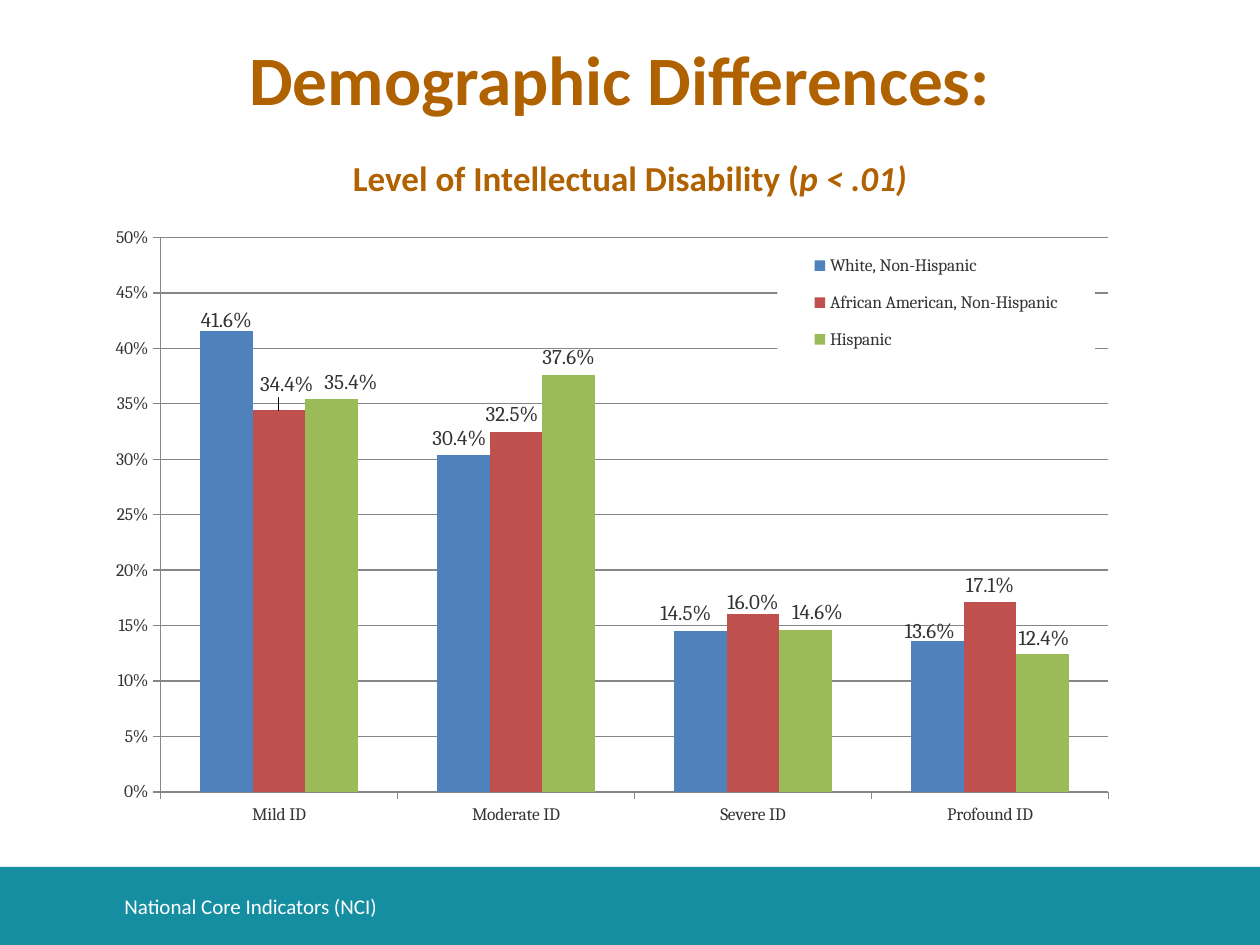
"""Build a slide with a clustered column chart of intellectual disability level by ethnicity."""
import pptx
import pptx.chart.data
import pptx.dml.color
import pptx.enum.chart
import pptx.enum.shapes
import pptx.enum.text
import pptx.oxml
import pptx.oxml.ns
import pptx.util

Pt = pptx.util.Pt
RGB = pptx.dml.color.RGBColor.from_string
Align = pptx.enum.text.PP_ALIGN
Chart = pptx.enum.chart

THEME = {
    "heading": RGB("B06100"), "band": RGB("168EA2"), "white": RGB("FFFFFF"),
    "ink": RGB("333333"), "rule": RGB("868686"),
    "title_size": Pt(39.6), "subtitle_size": Pt(20), "footer_size": Pt(12),
    "axis_size": Pt(10), "label_size": Pt(12),
    "text_font": "Calibri", "chart_font": "Cambria",
}


def apply(target, values):
    """Set every attribute named in values on target."""
    for name, value in values.items():
        setattr(target, name, value)


def style_font(font, size, color, **values):
    """Give a font its size, colour and further attributes."""
    apply(font, {"size": size, **values})
    font.color.rgb = color


deck = pptx.Presentation()
apply(deck, {"slide_width": Pt(720), "slide_height": Pt(540)})
slide = deck.slides.add_slide(deck.slide_layouts[6])

band = slide.shapes.add_shape(
    pptx.enum.shapes.MSO_SHAPE.RECTANGLE, Pt(0), Pt(495.4), Pt(720), Pt(44.6))
band.shadow.inherit = False
band.fill.solid()
band.fill.fore_color.rgb = THEME["band"]
band.line.fill.background()

texts = [
    ((36, 77, 648, 49), "subtitle_size", "heading", Align.CENTER, 1, True,
     [("Level of Intellectual Disability (", None), ("p < .01)", True)]),
    ((64, 503.3, 533, 28.8), "footer_size", "white", Align.LEFT, 1, None,
     [("National Core Indicators (NCI)", None)]),
    ((30.2, 21.6, 648, 51.1), "title_size", "heading", Align.CENTER, 0.9, True,
     [("Demographic Differences:", None)]),
]
for place, size, color, alignment, spacing, bold, runs in texts:
    frame = slide.shapes.add_textbox(*map(Pt, place)).text_frame
    apply(frame, {"word_wrap": True,
                  "vertical_anchor": pptx.enum.text.MSO_ANCHOR.MIDDLE})
    paragraph = frame.paragraphs[0]
    apply(paragraph, {"alignment": alignment, "line_spacing": spacing})
    for wording, italic in runs:
        run = paragraph.add_run()
        run.text = wording
        style_font(run.font, THEME[size], THEME[color],
                   name=THEME["text_font"], bold=bold, italic=italic)

groups = [
    ("White, Non-Hispanic", "4F81BD", (0.416, 0.304, 0.145, 0.136),
     {0: (0, 4), 1: (-2.3, 0.5), 2: (-8.3, 0), 3: (-4.3, 4.3)}),
    ("African American, Non-Hispanic", "C0504D", (0.344, 0.325, 0.16, 0.171),
     {0: (4.5, -4.8), 1: (-2.3, 0), 2: (0, 2.8)}),
    ("Hispanic", "9BBB59", (0.354, 0.376, 0.146, 0.124),
     {0: (11, 0), 2: (6.8, 0), 3: (0.8, 1)}),
]
data = pptx.chart.data.CategoryChartData(number_format="0.0%")
data.categories = ["Mild ID", "Moderate ID", "Severe ID", "Profound ID"]
for name, _, shares, _ in groups:
    data.add_series(name, shares)

chart_width, chart_height = 648, 347.8
chart = slide.shapes.add_chart(
    Chart.XL_CHART_TYPE.COLUMN_CLUSTERED, Pt(36), Pt(126),
    Pt(chart_width), Pt(chart_height), data).chart
style_font(chart.font, THEME["axis_size"], THEME["ink"], name=THEME["chart_font"])
apply(chart, {"has_title": False, "has_legend": True})
apply(chart.legend, {"position": Chart.XL_LEGEND_POSITION.RIGHT,
                     "include_in_layout": True})
apply(chart.plots[0], {"gap_width": 150, "overlap": 0, "vary_by_categories": False})

apply(chart.value_axis, {"minimum_scale": 0, "maximum_scale": 0.5, "major_unit": 0.05,
                         "has_major_gridlines": True})
apply(chart.value_axis.tick_labels, {"number_format": "0%",
                                     "number_format_is_linked": False})
for axis in (chart.category_axis, chart.value_axis):
    axis.major_tick_mark = Chart.XL_TICK_MARK.OUTSIDE
for line in (chart.category_axis.format.line, chart.value_axis.format.line,
             chart.value_axis.major_gridlines.format.line):
    line.width = Pt(0.75)
    line.color.rgb = THEME["rule"]

namespace = pptx.oxml.ns.nsdecls("c")
layout_xml = "<c:layout {}><c:manualLayout>{}</c:manualLayout></c:layout>"
number_xml = f'<c:numFmt {namespace} formatCode="0.0%" sourceLinked="0"/>'
outside = Chart.XL_LABEL_POSITION.OUTSIDE_END

for series, (_, color, _, nudges) in zip(chart.plots[0].series, groups):
    series.format.fill.solid()
    series.format.fill.fore_color.rgb = RGB(color)
    labels = series.data_labels
    apply(labels, {"show_value": True, "number_format": "0.0%",
                   "number_format_is_linked": False, "position": outside})
    style_font(labels.font, THEME["label_size"], THEME["ink"], name=THEME["chart_font"])
    for index, (right, down) in nudges.items():
        label = series.points[index].data_label
        style_font(label.font, THEME["label_size"], THEME["ink"], name=THEME["chart_font"])
        label.position = outside
        shift = (f'<c:x val="{right / chart_width}"/>'
                 f'<c:y val="{down / chart_height}"/>')
        anchor = series.points[index].data_label.font and labels._element.xpath(
            f"c:dLbl[c:idx/@val={index}]/c:idx")[0]
        for xml in (number_xml, layout_xml.format(namespace, shift)):
            anchor.addnext(pptx.oxml.parse_xml(xml))

edges = '<c:xMode val="edge"/><c:yMode val="edge"/>'
box = '<c:x val="{}"/><c:y val="{}"/><c:w val="{}"/><c:h val="{}"/>'
plot_area = chart._chartSpace.chart.plotArea
for old in plot_area.xpath("c:layout"):
    plot_area.remove(old)
plot_area.insert(0, pptx.oxml.parse_xml(layout_xml.format(
    namespace, '<c:layoutTarget val="inner"/>' + edges
    + box.format(0.086, 0.028, 0.836, 0.911))))

legend = chart.legend._element
for old in legend.xpath("c:layout"):
    legend.remove(old)
legend_fill = (f'<c:spPr {pptx.oxml.ns.nsdecls("c", "a")}><a:solidFill>'
               f'<a:srgbClr val="{THEME["white"]}"/></a:solidFill></c:spPr>')
legend.xpath("c:overlay")[0].addnext(pptx.oxml.parse_xml(legend_fill))
legend.xpath("c:legendPos")[0].addnext(pptx.oxml.parse_xml(
    layout_xml.format(namespace, edges + box.format(0.63, 0.03, 0.28, 0.21))))

deck.save("out.pptx")
